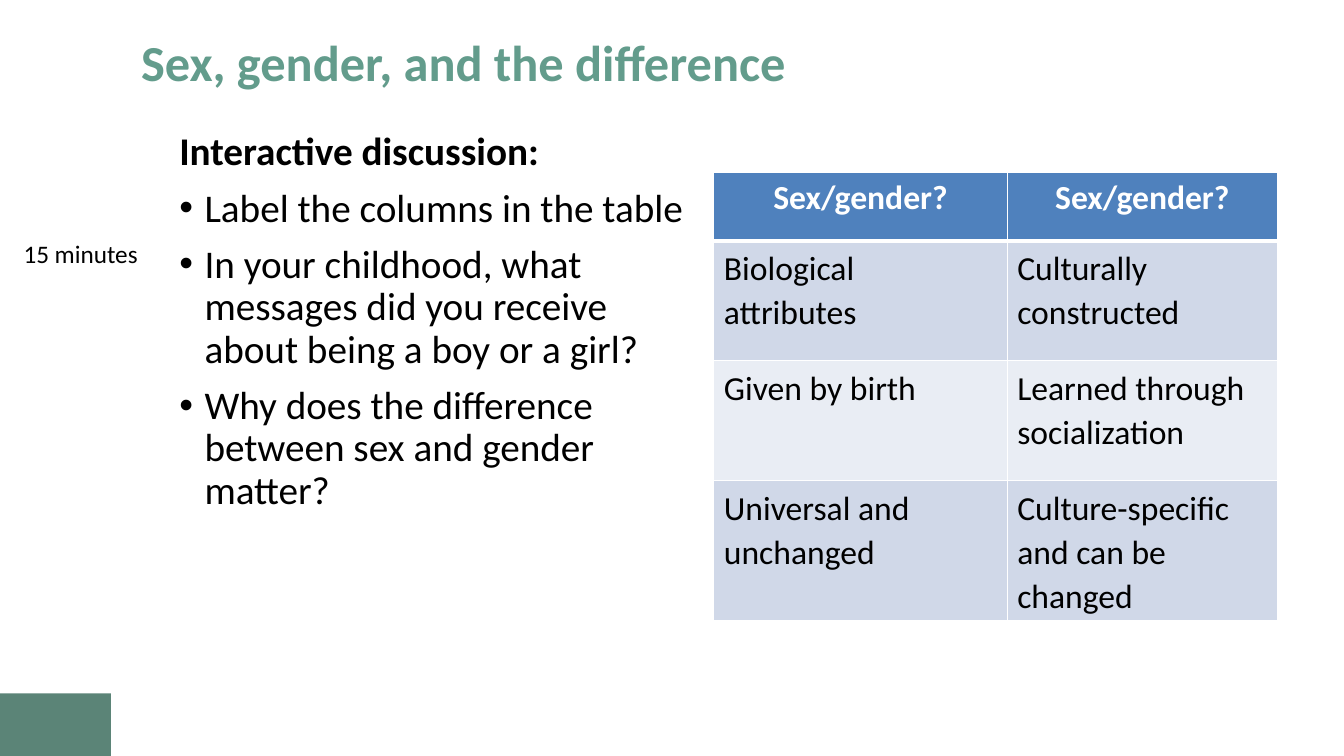
from dataclasses import dataclass

from lxml.etree import SubElement
from pptx import Presentation
from pptx.dml.color import RGBColor
from pptx.enum.shapes import MSO_SHAPE as Preset
from pptx.enum.text import MSO_ANCHOR as Anchor, MSO_AUTO_SIZE as AutoSize, PP_ALIGN as Align
from pptx.oxml.ns import qn
from pptx.util import Inches, Pt

FONT = "Calibri"
WHITE, BLACK = "FFFFFF", "000000"
GREEN, TITLE_GREEN = "5B8477", "639C8C"
HEADER_BLUE, BAND_DARK, BAND_LIGHT = "4F81BD", "D0D8E8", "E9EDF4"


@dataclass(frozen=True)
class Point:
    text: str
    bold: bool = False
    bullet: bool = True


@dataclass(frozen=True)
class Row:
    sex: str
    gender: str
    height: float
    fill: str
    header: bool = False


DISCUSSION = [
    Point("Interactive discussion:", bold=True, bullet=False),
    Point("Label the columns in the table"),
    Point("In your childhood, what messages did you receive about being a boy or a girl?"),
    Point("Why does the difference between sex and gender matter?"),
]
ROWS = [
    Row("Sex/gender?", "Sex/gender?", 0.68, HEADER_BLUE, header=True),
    Row("Biological\nattributes", "Culturally constructed", 1.19, BAND_DARK),
    Row("Given by birth", "Learned through socialization", 1.19, BAND_LIGHT),
    Row("Universal and unchanged", "Culture-specific and can be changed", 1.38, BAND_DARK),
]
COLUMN_WIDTHS = [2.91, 2.68]


def rgb(value: str) -> RGBColor:
    return RGBColor.from_string(value)


def box(left: float, top: float, width: float, height: float) -> list:
    return [Inches(length) for length in (left, top, width, height)]


def write(paragraph, text: str, *, size: float, color: str = BLACK, bold: bool = False,
          align=Align.LEFT, spacing: float = 1.0, before: float = 0, bullet: bool = False) -> None:
    if bullet:
        properties = paragraph._p.get_or_add_pPr()
        properties.set("marL", str(Inches(0.25)))
        properties.set("indent", str(-Inches(0.25)))
        SubElement(properties, qn("a:buFont")).set("typeface", "Arial")
        SubElement(properties, qn("a:buChar")).set("char", "•")
    paragraph.alignment = align
    paragraph.line_spacing = spacing
    paragraph.space_before = Pt(before)
    run = paragraph.add_run()
    run.text = text
    run.font.name, run.font.size, run.font.bold = FONT, Pt(size), bold
    run.font.color.rgb = rgb(color)


def add_title(slide) -> None:
    title = slide.shapes.title
    title.left, title.top, title.width, title.height = box(1.3, 0.29, 11.11, 0.71)
    frame = title.text_frame
    frame.auto_size = AutoSize.NONE
    frame.vertical_anchor = Anchor.MIDDLE
    write(frame.paragraphs[0], "Sex, gender, and the difference", size=36,
          color=TITLE_GREEN, bold=True, spacing=0.9)


def add_corner(slide) -> None:
    corner = slide.shapes.add_shape(Preset.RECTANGLE, *box(0, 6.88, 1.1, 0.62))
    corner.shadow.inherit = False
    corner.fill.solid()
    corner.fill.fore_color.rgb = rgb(GREEN)
    corner.line.fill.background()


def add_discussion(slide) -> None:
    frame = slide.shapes.add_textbox(*box(1.68, 1.26, 5.25, 5.5)).text_frame
    frame.word_wrap = True
    for index, point in enumerate(DISCUSSION):
        paragraph = frame.add_paragraph() if index else frame.paragraphs[0]
        write(paragraph, point.text, size=28, bold=point.bold, bullet=point.bullet,
              spacing=0.9, before=10 if index else 0)


def add_border(cell, side: str, width: float) -> None:
    line = SubElement(cell._tc.get_or_add_tcPr(), qn(f"a:ln{side}"), w=str(Pt(width)))
    fill = SubElement(line, qn("a:solidFill"))
    SubElement(fill, qn("a:srgbClr")).set("val", WHITE)


def fill_cell(cell, text: str, row: Row, after_header: bool) -> None:
    widths = {"L": 1, "R": 1, "T": 3 if after_header else 1, "B": 3 if row.header else 1}
    for side, width in widths.items():
        add_border(cell, side, width)
    cell.fill.solid()
    cell.fill.fore_color.rgb = rgb(row.fill)
    frame = cell.text_frame
    for index, line in enumerate(text.split("\n")):
        paragraph = frame.add_paragraph() if index else frame.paragraphs[0]
        write(paragraph, line, size=24, bold=row.header,
              color=WHITE if row.header else BLACK,
              align=Align.CENTER if row.header else Align.LEFT,
              spacing=1.0 if row.header else 1.07)


def add_comparison(slide) -> None:
    height = sum(row.height for row in ROWS)
    place = box(7.08, 1.71, sum(COLUMN_WIDTHS), height)
    table = slide.shapes.add_table(len(ROWS), len(COLUMN_WIDTHS), *place).table
    for column, width in zip(table.columns, COLUMN_WIDTHS):
        column.width = Inches(width)
    for index, row in enumerate(ROWS):
        table.rows[index].height = Inches(row.height)
        for column, text in enumerate((row.sex, row.gender)):
            fill_cell(table.cell(index, column), text, row, after_header=index == 1)


def add_duration(slide) -> None:
    frame = slide.shapes.add_textbox(*box(0.06, 2.32, 1.48, 0.4)).text_frame
    frame.word_wrap = True
    frame.auto_size = AutoSize.SHAPE_TO_FIT_TEXT
    write(frame.paragraphs[0], "15 minutes", size=18, align=Align.CENTER)


def main() -> None:
    deck = Presentation()
    deck.slide_width, deck.slide_height = Inches(13.33), Inches(7.5)
    slide = deck.slides.add_slide(deck.slide_layouts.get_by_name("Title Only"))
    add_corner(slide)
    add_title(slide)
    add_discussion(slide)
    add_comparison(slide)
    add_duration(slide)
    deck.save("out.pptx")


if __name__ == "__main__":
    main()
